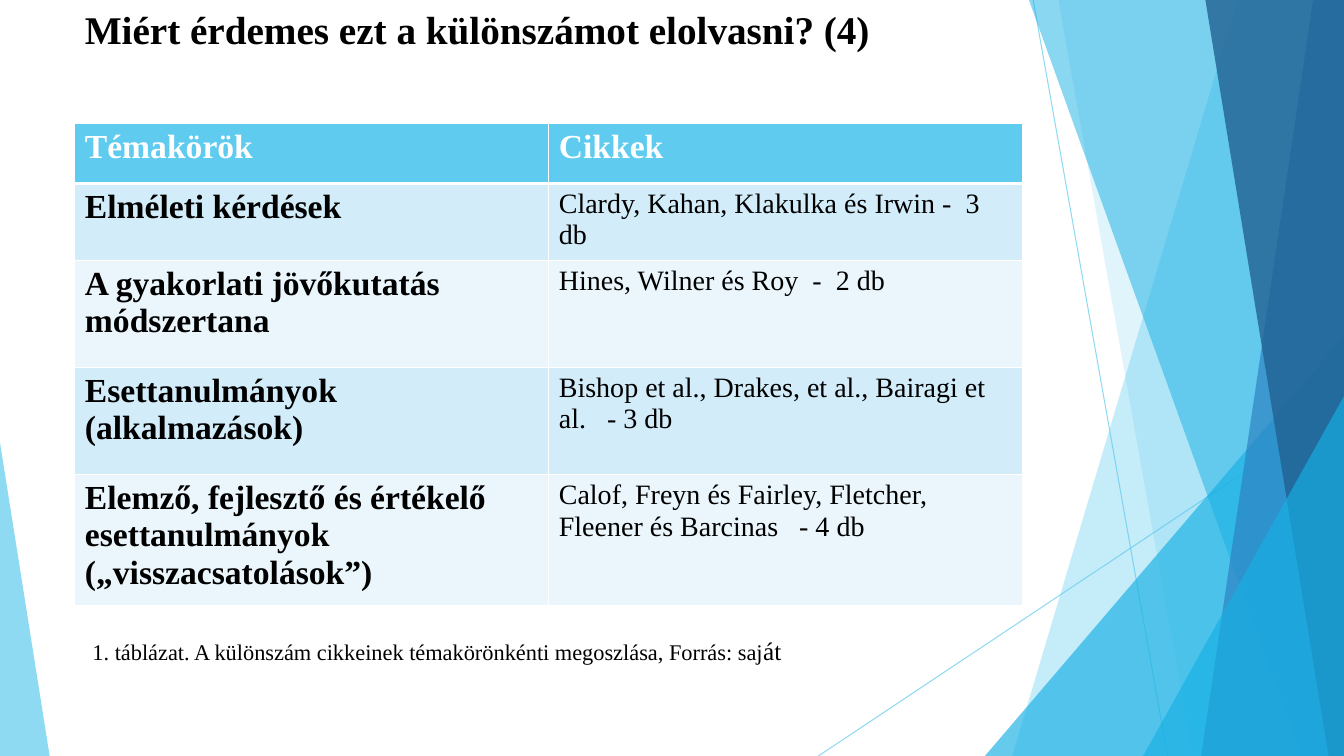
from lxml.etree import SubElement
from pptx import Presentation
from pptx.dml.color import RGBColor
from pptx.enum.shapes import MSO_CONNECTOR, MSO_SHAPE
from pptx.enum.text import MSO_ANCHOR
from pptx.oxml.ns import qn
from pptx.util import Pt

WIDTH, HEIGHT = 960, 540
FONT = "Times New Roman"
SKY, CYAN, BLUE, NAVY = "5FCBEF", "17B0E4", "2E83C3", "226292"
BLACK, WHITE = "000000", "FFFFFF"
BANDS = ("D2ECF9", "EAF6FC")

# Background: top x and bottom x of each panel's slanted left edge, colour, opacity
BACK_PANELS = [(884, 723, SKY, 36), (756, 852, SKY, 20)]
FRONT_PANELS = [
    (735, 929.5, CYAN, 50),
    (938, 858, BLUE, 70),
    (861, 949, NAVY, 80),
]

ROWS = [
    ("Témakörök", "Cikkek"),
    ("Elméleti kérdések", "Clardy, Kahan, Klakulka és Irwin -  3 db"),
    ("A gyakorlati jövőkutatás módszertana", "Hines, Wilner és Roy  -  2 db"),
    ("Esettanulmányok (alkalmazások)",
     "Bishop et al., Drakes, et al., Bairagi et al.   - 3 db"),
    ("Elemző, fejlesztő és értékelő esettanulmányok („visszacsatolások”)",
     "Calof, Freyn és Fairley, Fletcher, Fleener és Barcinas   - 4 db"),
]
ROW_HEIGHTS = (42.5, 42.5, 76.5, 76.5, 76.5)


def paint(color_format, color, opacity=100):
    color_format.rgb = RGBColor.from_string(color)


def set_opacity(parent, percent):
    color = next(parent.iter(qn("a:srgbClr")))
    SubElement(color, qn("a:alpha"), val=str(percent * 1000))


def fill_shape(shape, color, opacity):
    shape.shadow.inherit = False
    shape.fill.solid()
    paint(shape.fill.fore_color, color)
    set_opacity(shape._element.spPr, opacity)
    shape.line.fill.background()


def add_panel(slide, top_x, bottom_x, color, opacity):
    builder = slide.shapes.build_freeform(Pt(top_x), Pt(0))
    corners = [(WIDTH, 0), (WIDTH, HEIGHT), (bottom_x, HEIGHT)]
    builder.add_line_segments([(Pt(x), Pt(y)) for x, y in corners])
    fill_shape(builder.convert_to_shape(), color, opacity)


def add_triangle(slide, left, top, width, apex, color, opacity):
    shape = slide.shapes.add_shape(
        MSO_SHAPE.ISOSCELES_TRIANGLE,
        Pt(left), Pt(top), Pt(width), Pt(HEIGHT - top))
    shape.adjustments[0] = apex
    fill_shape(shape, color, opacity)


def add_thin_line(slide, x1, y1, x2, y2):
    line = slide.shapes.add_connector(
        MSO_CONNECTOR.STRAIGHT, Pt(x1), Pt(y1), Pt(x2), Pt(y2))
    line.line.width = Pt(0.75)
    paint(line.line.color, SKY)
    properties = line._element.spPr
    set_opacity(properties, 70)
    SubElement(properties, qn("a:effectLst"))


def format_run(run, size, color=BLACK, bold=False):
    run.font.name = FONT
    run.font.size = Pt(size)
    run.font.bold = bold
    paint(run.font.color, color)


def add_text(slide, left, top, width, height, pieces, bold=False):
    box = slide.shapes.add_textbox(Pt(left), Pt(top), Pt(width), Pt(height))
    text_frame = box.text_frame
    text_frame.word_wrap = True
    text_frame.vertical_anchor = MSO_ANCHOR.TOP
    for text, size in pieces:
        run = text_frame.paragraphs[0].add_run()
        run.text = text
        format_run(run, size, bold=bold)


def set_borders(cell, top, bottom):
    properties = cell._tc.get_or_add_tcPr()
    for side, width in (("L", 1), ("R", 1), ("T", top), ("B", bottom)):
        line = SubElement(properties, qn(f"a:ln{side}"), w=str(Pt(width)))
        fill = SubElement(line, qn("a:solidFill"))
        SubElement(fill, qn("a:srgbClr"), val=WHITE)


def add_topic_table(slide, left, top, width):
    frame = slide.shapes.add_table(
        len(ROWS), 2, Pt(left), Pt(top), Pt(width), Pt(sum(ROW_HEIGHTS)))
    table = frame.table
    for column in table.columns:
        column.width = Pt(width / 2)
    for row_index, texts in enumerate(ROWS):
        header = row_index == 0
        table.rows[row_index].height = Pt(ROW_HEIGHTS[row_index])
        for column_index, text in enumerate(texts):
            cell = table.cell(row_index, column_index)
            set_borders(cell, 3 if row_index == 1 else 1, 3 if header else 1)
            cell.fill.solid()
            paint(cell.fill.fore_color, SKY if header else BANDS[(row_index - 1) % 2])
            cell.text_frame.text = text
            strong = header or column_index == 0
            format_run(cell.text_frame.paragraphs[0].runs[0],
                       24 if strong else 20, WHITE if header else BLACK, strong)


def add_background(slide):
    add_thin_line(slide, 738, 0, 834, HEIGHT)
    add_thin_line(slide, WIDTH, 290, 584.6, HEIGHT)
    for panel in BACK_PANELS:
        add_panel(slide, *panel)
    add_triangle(slide, 703.5, 240, 256.5, 1, CYAN, 66)
    for panel in FRONT_PANELS:
        add_panel(slide, *panel)
    add_triangle(slide, 816.5, 283, 143.5, 1, CYAN, 66)
    add_triangle(slide, 0, 316, 35.5, 0, SKY, 70)


def main():
    presentation = Presentation()
    presentation.slide_width = Pt(WIDTH)
    presentation.slide_height = Pt(HEIGHT)
    slide = presentation.slides.add_slide(presentation.slide_layouts[6])

    add_background(slide)
    # Title
    add_text(slide, 53.5, 0, 677, 52.5,
             [("Miért érdemes ezt a különszámot elolvasni? (4)", 28)], bold=True)
    # Topics and articles
    add_topic_table(slide, 53.5, 88.5, 677)
    # Caption
    add_text(slide, 59, 450, 634, 29, [
        ("1. táblázat. A különszám cikkeinek témakörönkénti megoszlása, Forrás: saj", 16),
        ("át", 18),
    ])
    presentation.save("out.pptx")


if __name__ == "__main__":
    main()
